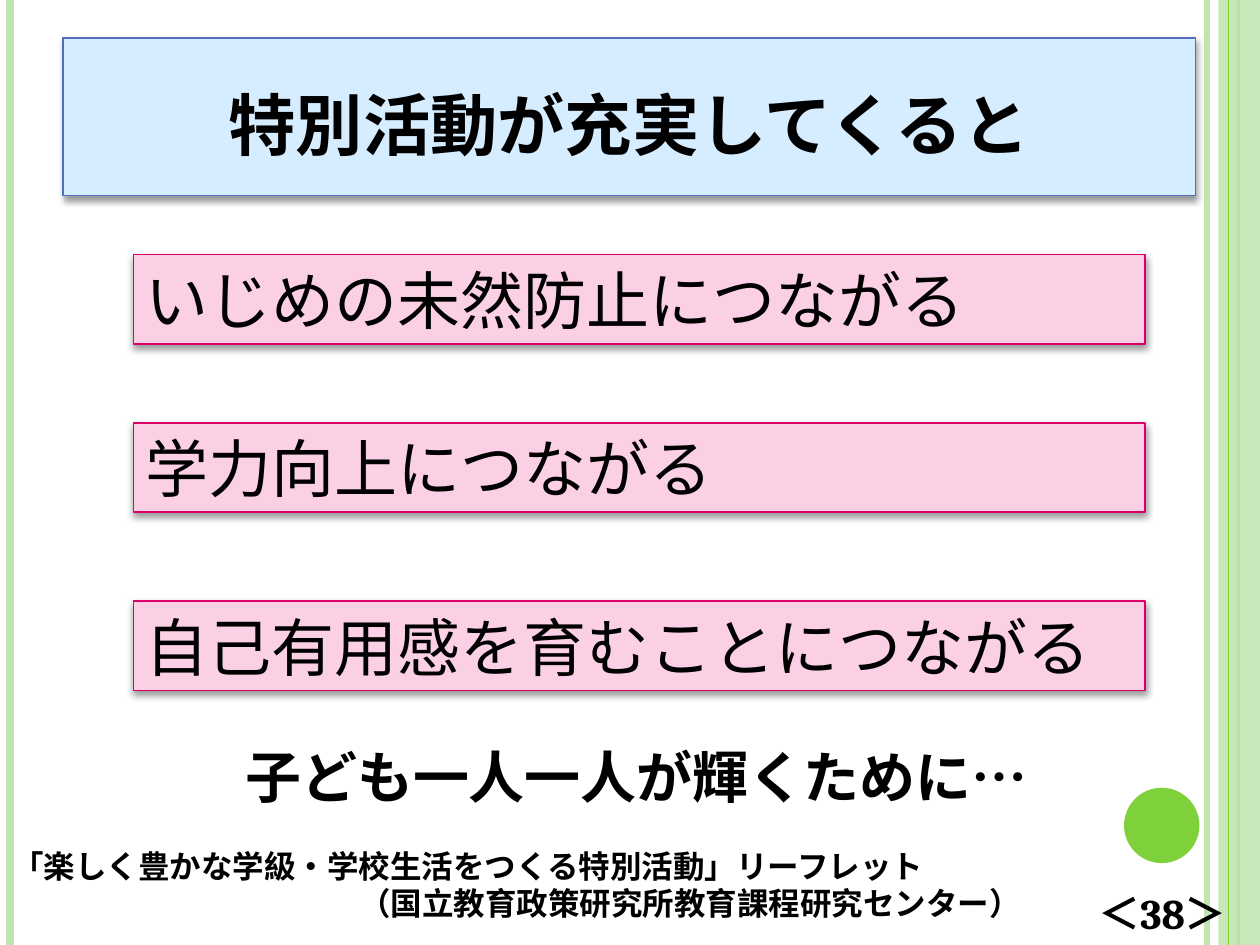
"""Build the slide on what fuller special activities lead to."""
from lxml.etree import SubElement
from pptx import Presentation
from pptx.dml.color import RGBColor
from pptx.enum.shapes import MSO_CONNECTOR, MSO_SHAPE
from pptx.enum.text import MSO_ANCHOR as ANCHOR, MSO_AUTO_SIZE as AUTO, PP_ALIGN as ALIGN
from pptx.oxml import parse_xml
from pptx.oxml.ns import nsdecls, qn
from pptx.util import Cm, Pt

BLACK = RGBColor(0, 0, 0)
PALE_GREEN = RGBColor(0xC0, 0xE5, 0xAF)
GREEN = RGBColor(0x7F, 0xD1, 0x3B)
PALE_BLUE = RGBColor(0xD6, 0xEC, 0xFF)
BLUE = RGBColor(0x50, 0x6E, 0xBD)
PALE_PINK = RGBColor(0xFB, 0xD0, 0xE4)
PINK = RGBColor(0xDA, 0x00, 0x68)
GOTHIC, SERIF = "Noto Sans CJK JP", "Cambria"

WIDTH, HEIGHT = 25.4, 19.05
TITLE = "特別活動が充実してくると"
EFFECTS = [
    ("いじめの未然防止につながる", 5.13),
    ("学力向上につながる", 8.53),
    ("自己有用感を育むことにつながる", 12.12),
]
CLOSING = "子ども一人一人が輝くために…"
SOURCE = [
    ("「楽しく豊かな学級・学校生活をつくる特別活動」リーフレット", 0),
    ("（国立教育政策研究所教育課程研究センター）", 6.99),
]
PAGE = "＜38＞"
STRIPES = [(24.33, PALE_GREEN, 3), (0.2, PALE_GREEN, 4.5), (24.97, GREEN, 1.5)]
THIN_STRIPE = (24.77, GREEN, 0.75)


def shadow_effect():
    return parse_xml(
        f'<a:effectLst {nsdecls("a")}><a:outerShdw blurRad="{Pt(4)}" dist="{Pt(2)}" '
        'dir="5400000" rotWithShape="0"><a:srgbClr val="000000">'
        '<a:alpha val="40000"/></a:srgbClr></a:outerShdw></a:effectLst>')


def place(sp, left, top, width, height):
    sp.left, sp.top, sp.width, sp.height = map(Cm, (left, top, width, height))


def paint(sp, fill, line=None):
    sp.shadow.inherit = False
    sp.fill.solid()
    sp.fill.fore_color.rgb = fill
    if line is None:
        sp.line.fill.background()
    else:
        sp.line.color.rgb = line
        sp.line.width = Pt(1)


def cast_shadow(sp):
    old = sp._element.spPr.find(qn("a:effectLst"))
    old.getparent().replace(old, shadow_effect())


def write(p, text, size, bold=False, face=GOTHIC, small=False, align=ALIGN.LEFT):
    p.alignment = align
    r = p.add_run()
    r.text = text
    r.font.size, r.font.bold, r.font.name = Pt(size), bold, face
    r.font.color.rgb = BLACK
    props = r._r.get_or_add_rPr()
    SubElement(props, qn("a:ea"), typeface=GOTHIC)
    if small:
        props.set("cap", "small")
    return r


def add_stripe(s, x, color, width):
    line = s.shapes.add_connector(MSO_CONNECTOR.STRAIGHT, Cm(x), 0, Cm(x), Cm(HEIGHT))
    line.line.color.rgb = color
    line.line.width = Pt(width)
    SubElement(line._element.spPr, qn("a:effectLst"))


def add_block(s, kind, box, fill, line=None):
    sp = s.shapes.add_shape(kind, *map(Cm, box))
    paint(sp, fill, line)
    return sp


def add_text(s, *box):
    tf = s.shapes.add_textbox(*map(Cm, box)).text_frame
    tf.word_wrap = True
    tf.vertical_anchor = ANCHOR.MIDDLE
    return tf


def main():
    prs = Presentation()
    prs.slide_width, prs.slide_height = Cm(WIDTH), Cm(HEIGHT)
    s = prs.slides.add_slide(prs.slide_layouts[5])

    for stripe in STRIPES:
        add_stripe(s, *stripe)
    band = add_block(s, MSO_SHAPE.RECTANGLE, (24.56, 0, 0.84, HEIGHT), PALE_GREEN)
    color = band._element.spPr.find(qn("a:solidFill"))[0]
    SubElement(color, qn("a:alpha"), val="87000")
    add_stripe(s, *THIN_STRIPE)
    add_block(s, MSO_SHAPE.OVAL, (22.66, 15.88, 1.52, 1.52), GREEN)

    title = s.shapes.title
    place(title, 1.27, 0.76, 22.83, 3.18)
    paint(title, PALE_BLUE, BLUE)
    cast_shadow(title)
    title.text_frame.vertical_anchor = ANCHOR.MIDDLE
    title.text_frame.auto_size = AUTO.NONE
    write(title.text_frame.paragraphs[0], TITLE, 48, True, small=True, align=ALIGN.CENTER)

    for text, top in EFFECTS:
        sp = add_block(s, MSO_SHAPE.RECTANGLE, (2.69, top, 20.4, 1.8), PALE_PINK, PINK)
        cast_shadow(sp)
        tf = sp.text_frame
        tf.margin_top = tf.margin_bottom = 0
        tf.vertical_anchor = ANCHOR.MIDDLE
        write(tf.paragraphs[0], text, 36)

    tf = add_text(s, 21.89, 17.73, 3.61, 1.32)
    write(tf.paragraphs[0], PAGE, 24, True, SERIF)

    tf = add_text(s, 0, 16.94, 21.79, 1.8)
    for i, (text, indent) in enumerate(SOURCE):
        p = tf.add_paragraph() if i else tf.paragraphs[0]
        write(p, text, 18, True)
        p.line_spacing = Pt(21)
        p._p.get_or_add_pPr().set("marL", str(Cm(indent)))

    tf = add_text(s, 4.7, 14.73, 20.7, 1.6)
    r = write(tf.paragraphs[0], CLOSING, 40, True, small=True)
    r._r.rPr.find(qn("a:solidFill")).addnext(shadow_effect())

    prs.save("out.pptx")


if __name__ == "__main__":
    main()
